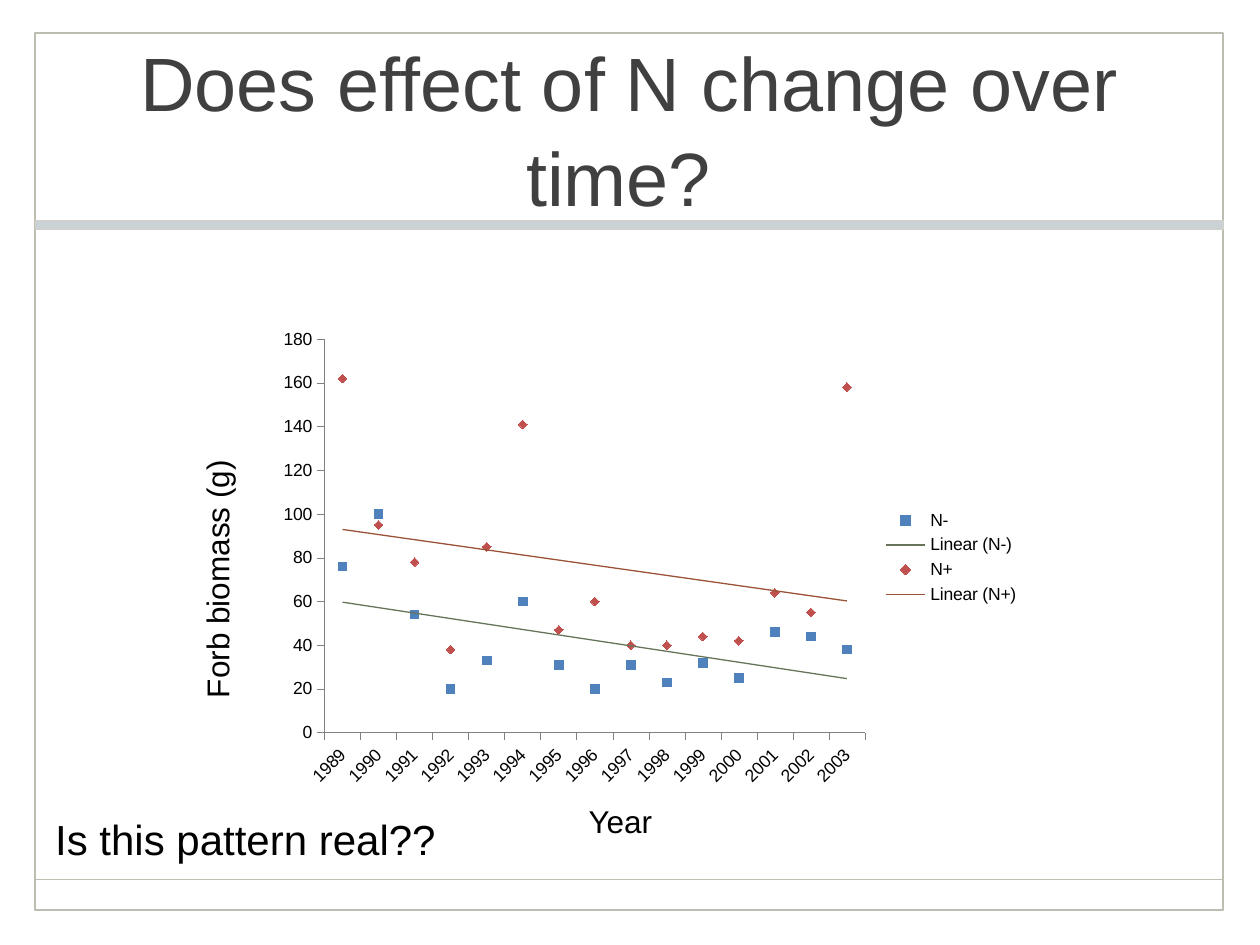
from lxml.etree import SubElement
from pptx import Presentation
from pptx.chart.data import CategoryChartData
from pptx.dml.color import RGBColor
from pptx.enum.chart import XL_CHART_TYPE, XL_LEGEND_POSITION as LEGEND, XL_MARKER_STYLE as MARKER, XL_TICK_MARK as TICK
from pptx.enum.shapes import MSO_CONNECTOR, MSO_SHAPE
from pptx.enum.text import MSO_ANCHOR, PP_ALIGN
from pptx.oxml import parse_xml
from pptx.oxml.ns import nsdecls, qn
from pptx.util import Pt

BLACK = RGBColor(0x00, 0x00, 0x00)
TITLE_GREY = RGBColor(0x40, 0x40, 0x40)
AXIS_GREY = RGBColor(0x80, 0x80, 0x80)
FRAME = RGBColor(0xBE, 0xBD, 0xB2)
BAND = RGBColor(0xCB, 0xD2, 0xD5)
BAND_EDGE = RGBColor(0xD1, 0xD0, 0xC8)
BLUE = RGBColor(0x4F, 0x81, 0xBD)
RED = RGBColor(0xC0, 0x50, 0x4D)
GREEN = RGBColor(0x66, 0x75, 0x59)
BROWN = RGBColor(0x9C, 0x52, 0x38)

YEARS = [str(year) for year in range(1989, 2004)]
SERIES = [
    ("N-", [76, 100, 54, 20, 33, 60, 31, 20, 31, 23, 32, 25, 46, 44, 38],
     MARKER.SQUARE, BLUE, GREEN),
    ("N+", [162, 95, 78, 38, 85, 141, 47, 60, 40, 40, 44, 42, 64, 55, 158],
     MARKER.DIAMOND, RED, BROWN),
]
PLOT_AREA = {"x": 0.07, "y": 0.04, "w": 0.71, "h": 0.83}


def write(tf, text, size, color=BLACK, align=PP_ALIGN.LEFT, spacing=None, font="Arial"):
    tf.word_wrap = True
    p = tf.paragraphs[0]
    p.alignment = align
    if spacing:
        p.line_spacing = spacing
    r = p.add_run()
    r.text = text
    r.font.name = font
    r.font.size = Pt(size)
    r.font.color.rgb = color


class Slide:
    def __init__(self, prs, font="Arial"):
        self.font = font
        self.s = prs.slides.add_slide(prs.slide_layouts[5])

    def title(self, text, x, y, w, h, size):
        sp = self.s.shapes.title
        sp.left, sp.top, sp.width, sp.height = Pt(x), Pt(y), Pt(w), Pt(h)
        sp.text_frame.vertical_anchor = MSO_ANCHOR.MIDDLE
        write(sp.text_frame, text, size, TITLE_GREY, PP_ALIGN.CENTER, 1.05, self.font)

    def rect(self, x, y, w, h, line, weight, fill=None):
        sp = self.s.shapes.add_shape(MSO_SHAPE.RECTANGLE, Pt(x), Pt(y), Pt(w), Pt(h))
        sp.shadow.inherit = False
        if fill is None:
            sp.fill.background()
        else:
            sp.fill.solid()
            sp.fill.fore_color.rgb = fill
        sp.line.color.rgb = line
        sp.line.width = Pt(weight)

    def rule(self, x1, x2, y, color, weight):
        line = self.s.shapes.add_connector(MSO_CONNECTOR.STRAIGHT, Pt(x1), Pt(y), Pt(x2), Pt(y))
        line.line.color.rgb = color
        line.line.width = Pt(weight)
        SubElement(line._element.spPr, qn("a:effectLst"))

    def text(self, text, x, y, w, h, size, align=PP_ALIGN.LEFT, rotation=0):
        sp = self.s.shapes.add_textbox(Pt(x), Pt(y), Pt(w), Pt(h))
        sp.rotation = rotation
        write(sp.text_frame, text, size, align=align, font=self.font)

    def chart(self, x, y, w, h, size):
        data = CategoryChartData()
        data.categories = YEARS
        for name, values, *_ in SERIES:
            data.add_series(name, values)
        chart = self.s.shapes.add_chart(
            XL_CHART_TYPE.LINE_MARKERS, Pt(x), Pt(y), Pt(w), Pt(h), data).chart
        chart.has_title = False
        chart.font.name = self.font
        chart.font.size = Pt(size)
        chart.font.color.rgb = BLACK
        chart.has_legend = True
        chart.legend.position = LEGEND.RIGHT
        chart.legend.include_in_layout = False
        chart.plots[0].vary_by_categories = False
        for axis in (chart.category_axis, chart.value_axis):
            self.axis(axis, size)
        chart.category_axis.tick_labels.font._element.getparent().getparent().getparent().find(
            qn("a:bodyPr")).set("rot", "-2700000")
        chart.value_axis.minimum_scale = 0
        chart.value_axis.maximum_scale = 180
        chart.value_axis.major_unit = 20
        for series, (_, _, marker, color, trend) in zip(chart.plots[0].series, SERIES):
            self.series(series, marker, color, trend)
        self.layout(chart)

    def axis(self, axis, size):
        axis.has_major_gridlines = False
        axis.major_tick_mark = TICK.OUTSIDE
        axis.format.line.color.rgb = AXIS_GREY
        axis.format.line.width = Pt(0.25)
        axis.tick_labels.font.size = Pt(size)
        axis.tick_labels.font.name = self.font
        axis.tick_labels.font.color.rgb = BLACK

    def series(self, series, marker, color, trend):
        series.smooth = False
        series.format.line.fill.background()
        series.marker.style = marker
        series.marker.size = 5
        series.marker.format.fill.solid()
        series.marker.format.fill.fore_color.rgb = color
        series.marker.format.line.color.rgb = color
        series._element.find(qn("c:cat")).addprevious(parse_xml(
            f'<c:trendline {nsdecls("c", "a")}><c:spPr><a:ln w="{Pt(0.75)}"><a:solidFill>'
            f'<a:srgbClr val="{trend}"/></a:solidFill></a:ln></c:spPr>'
            '<c:trendlineType val="linear"/><c:dispRSqr val="0"/><c:dispEq val="0"/>'
            '</c:trendline>'))

    def layout(self, chart):
        area = chart._chartSpace.chart.plotArea
        for old in area.findall(qn("c:layout")):
            area.remove(old)
        modes = "".join(f'<c:{key}Mode val="edge"/>' for key in "xy")
        sizes = "".join(f'<c:{key} val="{value}"/>' for key, value in PLOT_AREA.items())
        area.insert(0, parse_xml(
            f'<c:layout {nsdecls("c")}><c:manualLayout><c:layoutTarget val="inner"/>'
            f'{modes}{sizes}</c:manualLayout></c:layout>'))


def main():
    prs = Presentation()
    prs.slide_width, prs.slide_height = Pt(720), Pt(540)
    slide = Slide(prs)
    slide.rect(20, 19, 679, 501, FRAME, 1)
    slide.rule(20, 699, 502.5, FRAME, 1)
    slide.rect(20, 126, 679, 5, BAND_EDGE, 0.25, BAND)
    slide.title("Does effect of N change over time? ", 70.5, 19.5, 578, 106, 43.2)
    slide.chart(155, 183, 435, 271, 10)
    slide.text("Is this pattern real??", 24.5, 461.5, 318, 36, 24)
    slide.text("Forb biomass (g)", 36.5, 304, 175, 29, 18, rotation=270)
    slide.text("Year", 279.5, 454.5, 150, 29, 18, PP_ALIGN.CENTER)
    prs.save("out.pptx")


if __name__ == "__main__":
    main()
